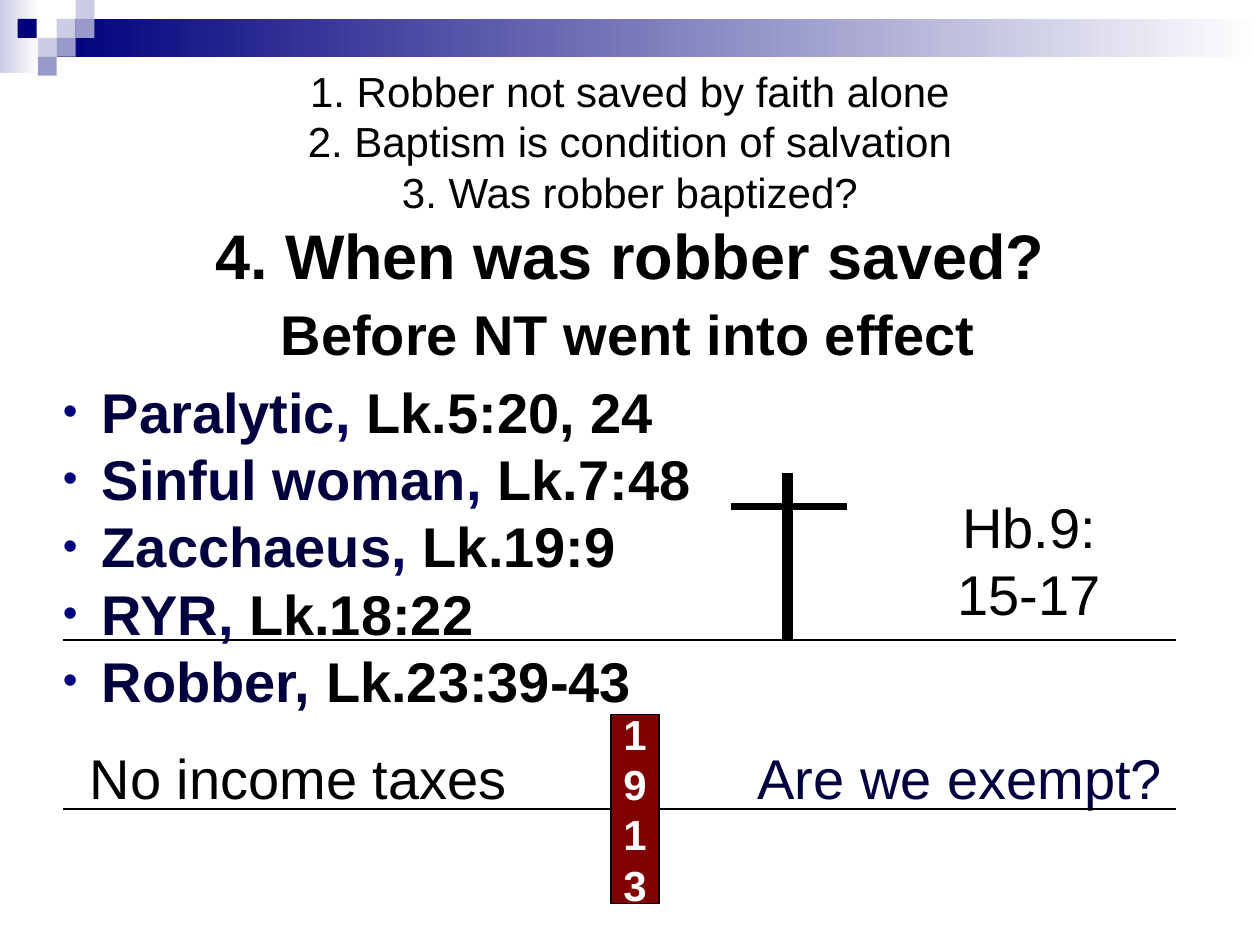
from dataclasses import dataclass

from lxml import etree
from pptx import Presentation
from pptx.dml.color import RGBColor
from pptx.enum.shapes import MSO_CONNECTOR, MSO_SHAPE
from pptx.enum.text import MSO_ANCHOR, PP_ALIGN
from pptx.oxml.ns import qn
from pptx.util import Pt

RECTANGLE = MSO_SHAPE.RECTANGLE
STRAIGHT = MSO_CONNECTOR.STRAIGHT
TOP, MIDDLE = MSO_ANCHOR.TOP, MSO_ANCHOR.MIDDLE
LEFT, CENTER = PP_ALIGN.LEFT, PP_ALIGN.CENTER

BLACK = RGBColor(0x00, 0x00, 0x00)
WHITE = RGBColor(0xFF, 0xFF, 0xFF)
NAVY = RGBColor(0x00, 0x00, 0x7D)
INK = RGBColor(0x00, 0x00, 0x3E)
COMMA = RGBColor(0x00, 0x00, 0x5E)
LILAC = RGBColor(0xCC, 0xCC, 0xE6)
VIOLET = RGBColor(0x99, 0x99, 0xCC)
MAROON = RGBColor(0x80, 0x00, 0x00)

PX_PER_INCH = 100
EMU_PER_PX = 914400 // PX_PER_INCH
FONT = "Arial"
TILE = 15
HANGING = 31


@dataclass(frozen=True)
class Area:
    left: int
    top: int
    width: int
    height: int


@dataclass(frozen=True)
class Span:
    text: str
    size: int = 32
    color: RGBColor = BLACK
    bold: bool = False


@dataclass(frozen=True)
class Line:
    spans: tuple[Span, ...]
    align: PP_ALIGN = CENTER
    after: int = 0
    bullet: bool = False


@dataclass(frozen=True)
class Rule:
    start: tuple[int, int]
    end: tuple[int, int]
    weight: float


@dataclass(frozen=True)
class Label:
    area: Area
    lines: tuple[Line, ...]
    anchor: MSO_ANCHOR = MIDDLE


def px(length: int) -> int:
    return length * EMU_PER_PX


def frame(area: Area) -> tuple[int, ...]:
    return tuple(px(n) for n in (area.left, area.top, area.width, area.height))


def add_bullet(para) -> None:
    props = para._p.get_or_add_pPr()
    props.set("marL", str(px(HANGING)))
    props.set("indent", str(px(-HANGING)))
    color = etree.SubElement(props, qn("a:buClr"))
    etree.SubElement(color, qn("a:srgbClr"), val=str(NAVY))
    etree.SubElement(props, qn("a:buSzPct"), val="75000")
    etree.SubElement(props, qn("a:buFont"), typeface=FONT)
    etree.SubElement(props, qn("a:buChar"), char="•")


def write(text_frame, lines: tuple[Line, ...], anchor: MSO_ANCHOR) -> None:
    text_frame.word_wrap = True
    text_frame.vertical_anchor = anchor
    for index, line in enumerate(lines):
        para = text_frame.add_paragraph() if index else text_frame.paragraphs[0]
        para.alignment = line.align
        if line.after:
            para.space_after = Pt(line.after)
        if line.bullet:
            add_bullet(para)
        for span in line.spans:
            for row, text in enumerate(span.text.split("\n")):
                if row:
                    para.add_line_break()
                if text:
                    run = para.add_run()
                    run.text = text
                    run.font.name = FONT
                    run.font.size = Pt(span.size)
                    run.font.bold = span.bold
                    run.font.color.rgb = span.color


def add_label(page, label: Label) -> None:
    box = page.shapes.add_textbox(*frame(label.area))
    write(box.text_frame, label.lines, label.anchor)


def add_block(page, area: Area, color: RGBColor):
    block = page.shapes.add_shape(RECTANGLE, *frame(area))
    block.shadow.inherit = False
    block.fill.solid()
    block.fill.fore_color.rgb = color
    block.line.fill.background()
    return block


def add_fade(page, area: Area, color: RGBColor) -> None:
    fill = add_block(page, area, color).fill
    fill.gradient()
    fill.gradient_angle = 0
    for stop, shade in zip(fill.gradient_stops, (color, WHITE)):
        stop.color.rgb = shade


def add_rule(page, rule: Rule) -> None:
    ends = (px(n) for n in rule.start + rule.end)
    connector = page.shapes.add_connector(STRAIGHT, *ends)
    connector.line.color.rgb = BLACK
    connector.line.width = Pt(rule.weight)
    etree.SubElement(connector._element.spPr, qn("a:effectLst"))


def add_year(page, area: Area, year: str) -> None:
    block = add_block(page, area, MAROON)
    block.line.color.rgb = BLACK
    block.line.width = Pt(0.75)
    text_frame = block.text_frame
    text_frame.margin_left = text_frame.margin_right = 0
    digits = tuple(Line((Span(digit, 24, WHITE, True),)) for digit in year)
    write(text_frame, digits, MIDDLE)


def example(name: str, comma: str, verse: str) -> Line:
    parts = ((name, INK), (comma, COMMA), (verse, BLACK))
    spans = tuple(Span(text, 32, color, True) for text, color in parts if text)
    return Line(spans, LEFT, bullet=True)


FADES = ((Area(0, 0, 31, 58), LILAC), (Area(45, 15, 955, 30), NAVY))
TILES = (
    (45, 15, LILAC), (60, 0, LILAC), (60, 15, VIOLET), (30, 30, LILAC),
    (14, 15, NAVY), (45, 30, VIOLET), (30, 45, VIOLET),
)
RULES = (
    Rule((50, 508), (933, 508), 0.75),
    Rule((625, 375), (625, 508), 6),
    Rule((580, 402), (672, 402), 4.5),
    Rule((50, 642), (933, 642), 0.75),
)
TITLE = Line((
    Span("1. Robber not saved by faith alone\n"
         "2. Baptism is condition of salvation\n"
         "3. Was robber baptized?\n", 24),
    Span("4. When was robber saved?", 36, bold=True),
))
BODY = (
    Line((Span("Before NT went into effect", bold=True),), after=6),
    example("Paralytic", ",", " Lk.5:20, 24"),
    example("Sinful woman", ", ", "Lk.7:48"),
    example("Zacchaeus", ",", " Lk.19:9"),
    example("RYR", ",", " Lk.18:22"),
    example("Robber,", "", " Lk.23:39-43"),
)
LABELS = (
    Label(Area(50, 42, 900, 200), (TITLE,)),
    Label(Area(40, 233, 917, 492), BODY, TOP),
    Label(Area(717, 386, 200, 117), (Line((Span("Hb.9:\n15-17"),)),), TOP),
    Label(Area(58, 592, 358, 50), (Line((Span("No income taxes"),)),)),
    Label(Area(583, 592, 358, 50), (Line((Span("Are we exempt?", color=INK),)),)),
)


def main() -> None:
    deck = Presentation()
    deck.slide_width, deck.slide_height = px(1000), px(750)
    page = deck.slides.add_slide(deck.slide_layouts[6])
    for area, color in FADES:
        add_fade(page, area, color)
    for left, top, color in TILES:
        add_block(page, Area(left, top, TILE, TILE), color)
    for label in LABELS:
        add_label(page, label)
    for rule in RULES:
        add_rule(page, rule)
    add_year(page, Area(485, 567, 38, 150), "1913")
    deck.save("out.pptx")


if __name__ == "__main__":
    main()
